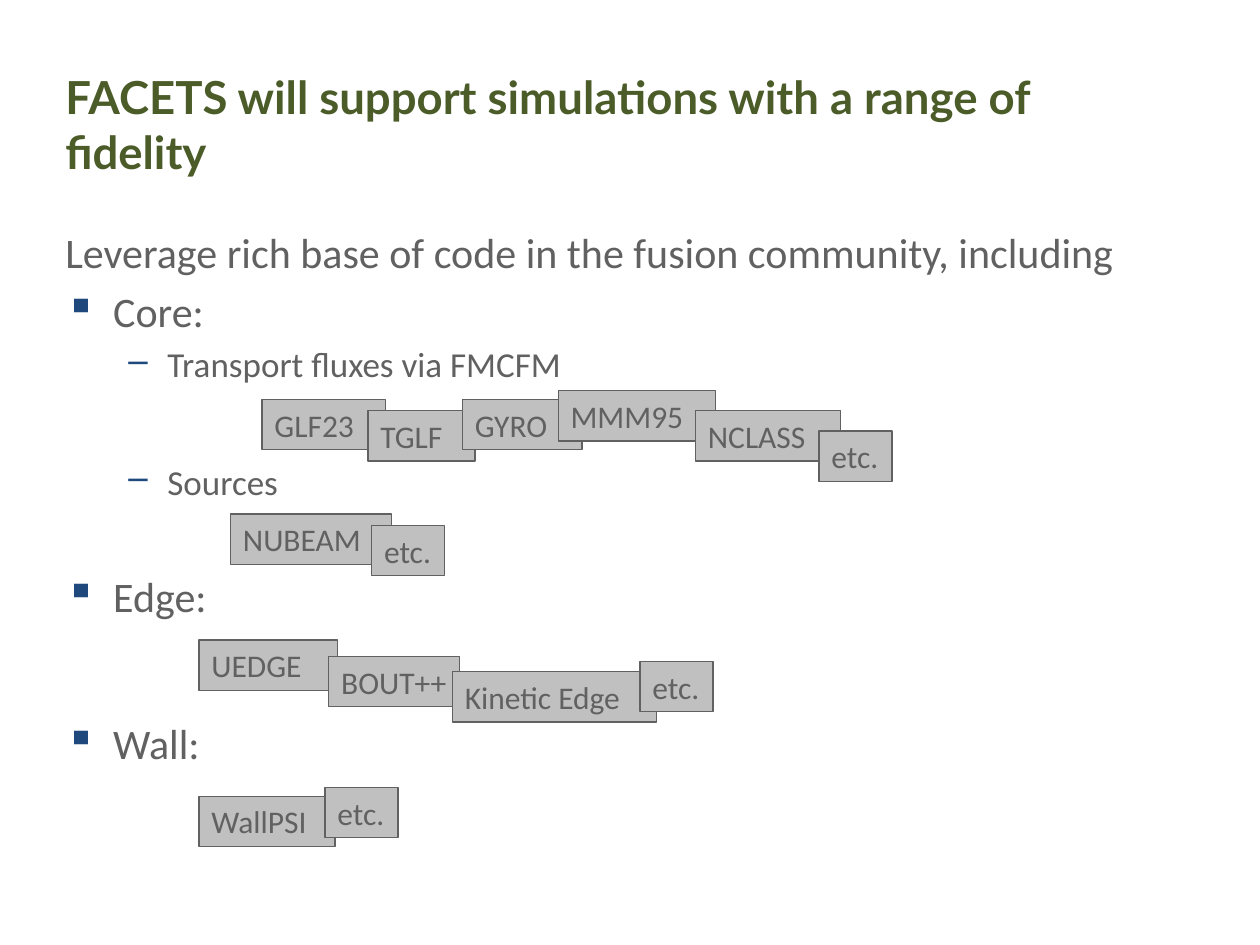
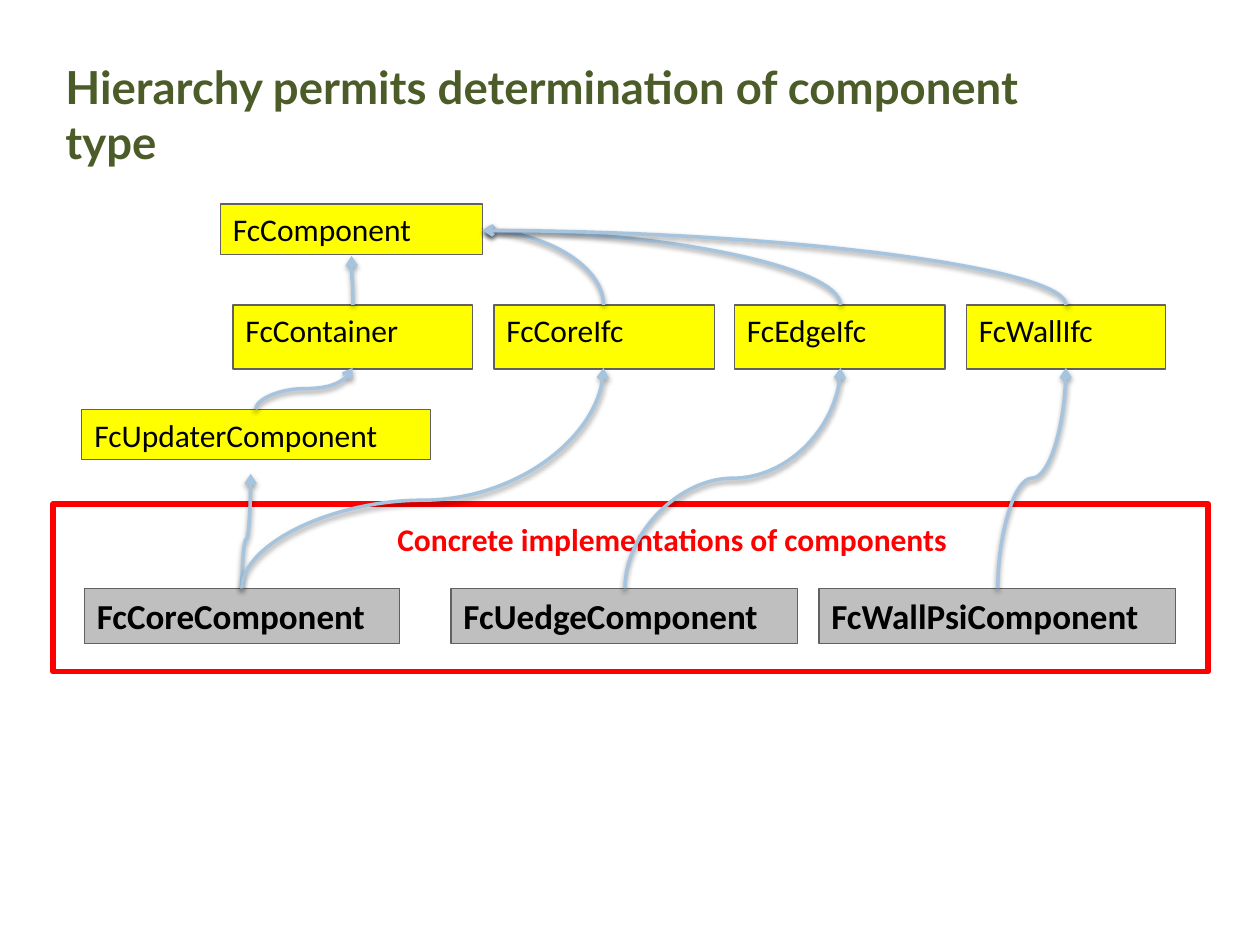
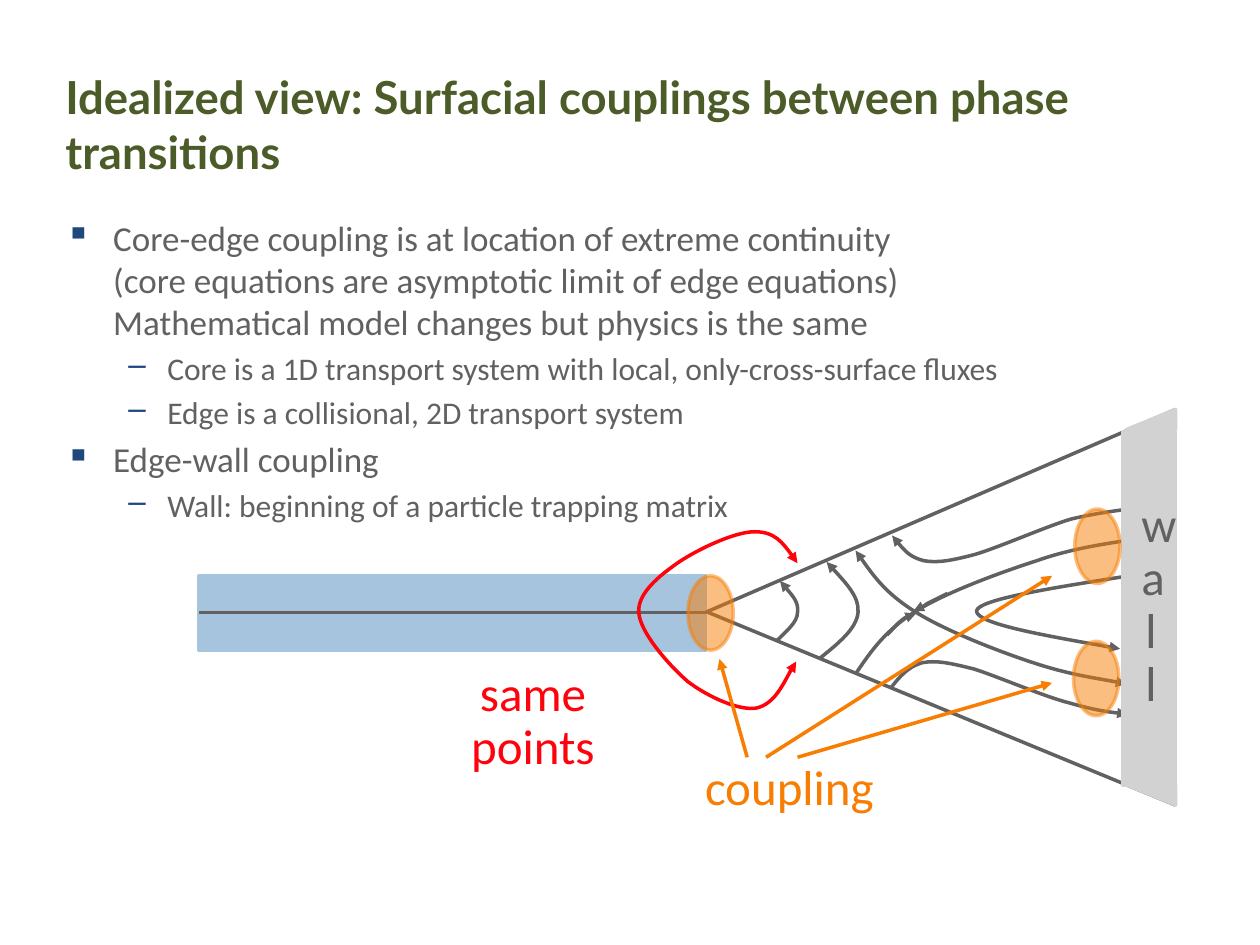
import lxml.etree
import pptx
import pptx.dml.color
import pptx.enum.shapes
import pptx.enum.text
import pptx.oxml.ns
import pptx.util

Inches = pptx.util.Inches
Pt = pptx.util.Pt
RGBColor = pptx.dml.color.RGBColor
SHAPE = pptx.enum.shapes.MSO_SHAPE
LINK = pptx.enum.shapes.MSO_CONNECTOR
CENTER = pptx.enum.text.PP_ALIGN.CENTER
qn = pptx.oxml.ns.qn
SubElement = lxml.etree.SubElement

GREEN = RGBColor(0x4B, 0x5C, 0x29)
GRAY = RGBColor(0x61, 0x61, 0x61)
SILVER = RGBColor(0xC0, 0xC0, 0xC0)
PALE = RGBColor(0xD2, 0xD2, 0xD2)
YELLOW = RGBColor(0xFF, 0xFF, 0x00)
BLACK = RGBColor(0x00, 0x00, 0x00)
WHITE = RGBColor(0xFF, 0xFF, 0xFF)
RED = RGBColor(0xFF, 0x00, 0x00)
ROSE = RGBColor(0xFF, 0x02, 0x0C)
BLUE = RGBColor(0xA6, 0xC4, 0xDE)
ORANGE = RGBColor(0xF7, 0x7E, 0x03)
NAVY = "1F497D"
INDENTS = {"▪": (0.38, -0.38), "–": (0.81, -0.31)}


def write(shape, rows, tint, face="Calibri", bold=False, align=None, pitch=None):
    frame = shape.text_frame
    frame.word_wrap = True
    frame.vertical_anchor = pptx.enum.text.MSO_ANCHOR.TOP
    for i, (text, size, mark, gap) in enumerate(rows):
        para = frame.add_paragraph() if i else frame.paragraphs[0]
        para.text = text
        para.alignment = align or pptx.enum.text.PP_ALIGN.LEFT
        if mark:
            props = para._p.get_or_add_pPr()
            left, hang = INDENTS[mark]
            props.set("marL", str(Inches(left)))
            props.set("indent", str(Inches(hang)))
            SubElement(SubElement(props, qn("a:buClr")), qn("a:srgbClr"), val=NAVY)
            SubElement(props, qn("a:buChar"), char=mark)
        if i:
            para.space_before = Pt(gap or size * 0.2)
        if pitch:
            para.line_spacing = pitch
        para.font.name = face
        para.font.size = Pt(size)
        para.font.bold = bold
        para.font.color.rgb = tint


def draw(shape, tint, width=2, head=None, tail=None):
    shape.line.color.rgb = tint
    shape.line.width = Pt(width)
    props = shape._element.spPr
    for tag, kind in (("a:headEnd", head), ("a:tailEnd", tail)):
        if kind:
            SubElement(props.find(qn("a:ln")), qn(tag), type=kind)
    return SubElement(props, qn("a:effectLst"))


deck = pptx.Presentation()
deck.slide_width = Inches(10)
deck.slide_height = Inches(7.5)
slides = []
for text, top in (
    ("FACETS will support simulations with a range of fidelity", 0.5),
    ("Hierarchy permits determination of component type", 0.42),
    ("Idealized view: Surfacial couplings between phase transitions", 0.5),
):
    slide = deck.slides.add_slide(deck.slide_layouts[6])
    title = slide.shapes.add_textbox(Inches(0.42), Inches(top), Inches(8.25), Inches(1.05))
    write(title, [(text, 26, None, None)], GREEN, "Lato", True)
    slides.append(slide.shapes)
codes, tree, view = slides

for page, top, rows in (
    (codes, 1.75, [
        ("Leverage rich base of code in the fusion community, including", 24, None, None),
        ("Core:", 24, "▪", None),
        ("Transport fluxes via FMCFM", 20, "–", None),
        ("Sources", 20, "–", 43),
        ("Edge:", 24, "▪", 39),
        ("Wall:", 24, "▪", 55),
    ]),
    (view, 1.67, [
        ("Core-edge coupling is at location of extreme continuity\v"
         "(core equations are asymptotic limit of edge equations)\v"
         "Mathematical model changes but physics is the same", 20, "▪", None),
        ("Core is a 1D transport system with local, only-cross-surface fluxes", 18, "–", None),
        ("Edge is a collisional, 2D transport system", 18, "–", None),
        ("Edge-wall coupling", 20, "▪", None),
        ("Wall: beginning of a particle trapping matrix", 18, "–", None),
    ]),
):
    body = page.add_textbox(Inches(0.42), Inches(top), Inches(9.04), Inches(4.95))
    write(body, rows, GRAY)

tags = [(codes, *row, 0.4, SILVER, GRAY, 18) for row in (
    ("GLF23", 2.08, 3.17, 0.98),
    ("TGLF", 2.92, 3.26, 0.85),
    ("GYRO", 3.67, 3.17, 0.95),
    ("UEDGE", 1.58, 5.08, 1.1),
    ("BOUT++", 2.61, 5.21, 1.04),
    ("Kinetic Edge", 3.59, 5.33, 1.62),
    ("NUBEAM", 1.83, 4.08, 1.28),
    ("MMM95", 4.43, 3.1, 1.25),
    ("NCLASS", 5.52, 3.26, 1.15),
    ("etc.", 6.5, 3.42, 0.58),
    ("etc.", 5.08, 5.25, 0.58),
    ("etc.", 2.95, 4.17, 0.58),
    ("WallPSI", 1.58, 6.32, 1.08),
    ("etc.", 2.58, 6.25, 0.58),
)]
tags += [(tree, *row, YELLOW, BLACK, 18) for row in (
    ("FcComponent", 1.75, 1.62, 2.08, 0.4),
    ("FcContainer", 1.85, 2.42, 1.9, 0.51),
    ("FcUpdaterComponent", 0.65, 3.25, 2.77, 0.4),
    ("FcCoreIfc", 3.92, 2.42, 1.75, 0.51),
    ("FcEdgeIfc", 5.83, 2.42, 1.67, 0.51),
    ("FcWallIfc", 7.67, 2.42, 1.58, 0.51),
)]
tags += [(tree, *row, 0.44, RGBColor(0xBF, 0xBF, 0xBF), BLACK, 20) for row in (
    ("FcCoreComponent", 0.67, 4.67, 2.5),
    ("FcUedgeComponent", 3.58, 4.67, 2.75),
    ("FcWallPsiComponent", 6.5, 4.67, 2.83),
)]
for page, text, left, top, width, height, fill, tint, size in tags:
    box = page.add_shape(SHAPE.RECTANGLE, Inches(left), Inches(top), Inches(width), Inches(height))
    box.fill.solid()
    box.fill.fore_color.rgb = fill
    draw(box, GRAY, 0.75)
    box.text_frame.margin_right = 0
    write(box, [(text, size, None, None)], tint, bold=size == 20)

links = [
    (4.79, 2.42, 3.83, 1.83, None),
    (6.67, 2.42, 3.83, 1.83, None),
    (8.46, 2.42, 3.83, 1.83, None),
    (2.03, 3.25, 2.8, 2.92, 0.5),
    (2.8, 2.42, 2.79, 2.03, 0.5),
    (1.92, 4.67, 1.99, 3.76, 0.43),
    (1.92, 4.67, 4.79, 2.92, 0.4),
    (4.96, 4.67, 6.67, 2.92, 0.5),
    (7.92, 4.67, 8.46, 2.92, 0.5),
]
for i, (x1, y1, x2, y2, bend) in enumerate(links):
    if i == 5:
        frame = tree.add_shape(SHAPE.RECTANGLE, Inches(0.42), Inches(4), Inches(9.17), Inches(1.33))
        frame.fill.background()
        draw(frame, RED, 3.25)
        note = tree.add_textbox(Inches(1.92), Inches(4.08), Inches(6.83), Inches(0.51))
        note.fill.solid()
        note.fill.fore_color.rgb = WHITE
        write(note, [("Concrete implementations of components", 18, None, None)], RED,
              bold=True, align=CENTER)
    long, wide = y1 - y2, abs(x2 - x1)
    left, top = (x1 + x2 - long) / 2, (y1 + y2 - wide) / 2
    link = tree.add_connector(LINK.CURVE, Inches(left), Inches(top),
                              Inches(left + long), Inches(top + wide))
    props = link._element.spPr
    turn = props.find(qn("a:xfrm"))
    turn.set("flipV", "1")
    turn.set("rot", str((90 if x2 > x1 else 270) * 60000))
    if x2 > x1:
        turn.set("flipH", "1")
    geom = props.find(qn("a:prstGeom"))
    if bend:
        SubElement(geom.find(qn("a:avLst")), qn("a:gd"), name="adj1",
                   fmla=f"val {round(bend * 100000)}")
    else:
        geom.set("prst", "curvedConnector2")
    glow = SubElement(draw(link, BLUE, tail="arrow"), qn("a:outerShdw"), blurRad=str(Pt(3.1)),
                      dist=str(Pt(1.6)), dir="5400000", rotWithShape="0")
    SubElement(SubElement(glow, qn("a:srgbClr"), val="000000"), qn("a:alpha"), val="38000")

core = view.add_shape(SHAPE.RECTANGLE, Inches(1.58), Inches(4.57), Inches(4.02), Inches(0.59))
core.fill.solid()
core.fill.fore_color.rgb = BLUE
draw(core, BLUE)
for ends in ((1.58, 4.86, 5.6, 4.86), (5.62, 4.86, 9.33, 6.39), (5.6, 4.86, 9.33, 3.25)):
    draw(view.add_connector(LINK.STRAIGHT, *map(Inches, ends)), GRAY)

TIP = "triangle"
curves = [
    (GRAY, None, TIP, [(6.16, 5.09), (6.24, 5.01), (6.33, 4.94), (6.33, 4.86),
                       (6.34, 4.78), (6.26, 4.69), (6.19, 4.61)]),
    (GRAY, None, TIP, [(6.5, 5.23), (6.65, 5.11), (6.8, 4.99), (6.81, 4.86),
                       (6.82, 4.74), (6.69, 4.6), (6.56, 4.46)]),
    (GRAY, None, None, [(6.79, 5.35), (6.91, 5.17), (7.03, 5), (7.27, 4.85), (7.51, 4.7),
                        (7.95, 4.54), (8.23, 4.45), (8.51, 4.35), (8.82, 4.31), (8.94, 4.29)]),
    (GRAY, TIP, TIP, [(6.79, 4.37), (6.91, 4.54), (7.03, 4.71), (7.27, 4.86), (7.51, 5.01),
                      (7.95, 5.18), (8.23, 5.27), (8.51, 5.36), (8.82, 5.4), (8.94, 5.43)]),
    (GRAY, None, TIP, [(7.07, 5.46), (7.14, 5.37), (7.21, 5.29), (7.32, 5.26), (7.43, 5.24),
                       (7.53, 5.26), (7.73, 5.31), (7.92, 5.37), (8.29, 5.53), (8.49, 5.58),
                       (8.7, 5.64), (8.87, 5.66), (8.95, 5.67)]),
    (GRAY, TIP, None, [(7.08, 4.25), (7.15, 4.34), (7.22, 4.42), (7.33, 4.45), (7.44, 4.47),
                       (7.55, 4.45), (7.74, 4.4), (7.94, 4.34), (8.3, 4.18), (8.5, 4.12),
                       (8.71, 4.07), (8.89, 4.05), (8.96, 4.04)]),
    (GRAY, None, TIP, [(7.52, 4.71), (7.46, 4.74), (7.4, 4.77), (7.36, 4.79),
                       (7.32, 4.82), (7.28, 4.84), (7.25, 4.85)]),
    (GRAY, None, TIP, [(7.04, 5.04), (7.08, 5), (7.12, 4.95), (7.16, 4.92),
                       (7.2, 4.89), (7.25, 4.88), (7.27, 4.87)]),
    (GRAY, None, TIP, [(8.9, 4.58), (8.33, 4.67), (7.76, 4.76), (7.75, 4.85),
                       (7.75, 4.95), (8.32, 5.05), (8.89, 5.15)]),
    (ROSE, TIP, TIP, [(6.33, 4.47), (6.24, 4.34), (6.15, 4.22), (5.99, 4.22), (5.83, 4.22),
                      (5.54, 4.36), (5.39, 4.46), (5.23, 4.57), (5.06, 4.71), (5.07, 4.86),
                      (5.08, 5.02), (5.31, 5.28), (5.46, 5.41), (5.62, 5.53), (5.86, 5.64),
                      (6, 5.62), (6.15, 5.59), (6.27, 5.32), (6.32, 5.25)]),
]
for tint, head, tail, points in curves:
    spots = [(Inches(x), Inches(y)) for x, y in points]
    pen = view.build_freeform(*spots[0])
    pen.add_line_segments(spots[1:], close=False)
    curve = pen.convert_to_shape()
    curve.fill.background()
    draw(curve, tint, head=head, tail=tail)
    track = curve._element.spPr.find(".//" + qn("a:path"))
    steps = list(track)[1:]
    for i in range(0, len(steps), 3):
        arc = SubElement(track, qn("a:cubicBezTo"))
        for step in steps[i:i + 3]:
            arc.append(step[0])
            track.remove(step)

wall = view.add_shape(SHAPE.RECTANGLE, Inches(8.91), Inches(3.43), Inches(0.42), Inches(2.8))
wall.fill.solid()
wall.fill.fore_color.rgb = PALE
draw(wall, PALE)
for text, left, top, width, height, tint in (
    ("same points", 3.26, 5.26, 1.94, 0.96, ROSE),
    ("wall", 8.96, 3.92, 0.35, 1.8, GRAY),
    ("coupling", 5.36, 6.01, 1.81, 0.53, ORANGE),
):
    label = view.add_textbox(Inches(left), Inches(top), Inches(width), Inches(height))
    write(label, [(text, 28, None, None)], tint, align=CENTER, pitch=0.9)

for left, top in ((5.46, 4.57), (8.53, 4.04), (8.52, 5.09)):
    oval = view.add_shape(SHAPE.OVAL, Inches(left), Inches(top), Inches(0.36), Inches(0.59))
    oval.fill.solid()
    oval.fill.fore_color.rgb = ORANGE
    draw(oval, ORANGE)
    for shade in list(oval._element.spPr.iter(qn("a:srgbClr"))):
        SubElement(shade, qn("a:alpha"), val="50000")

for ends in ((5.93, 6.01, 5.71, 5.23), (6.08, 6.01, 8.35, 4.57), (6.33, 6.01, 8.35, 5.42)):
    draw(view.add_connector(LINK.STRAIGHT, *map(Inches, ends)), ORANGE, tail=TIP)

for top, flips in ((3.25, ["flipH"]), (6.23, ["flipH", "flipV"])):
    wedge = view.add_shape(SHAPE.RIGHT_TRIANGLE, Inches(8.94), Inches(top),
                           Inches(0.39), Inches(0.16))
    wedge.fill.solid()
    wedge.fill.fore_color.rgb = PALE
    draw(wedge, PALE)
    for flip in flips:
        wedge._element.spPr.find(qn("a:xfrm")).set(flip, "1")

deck.save("out.pptx")
